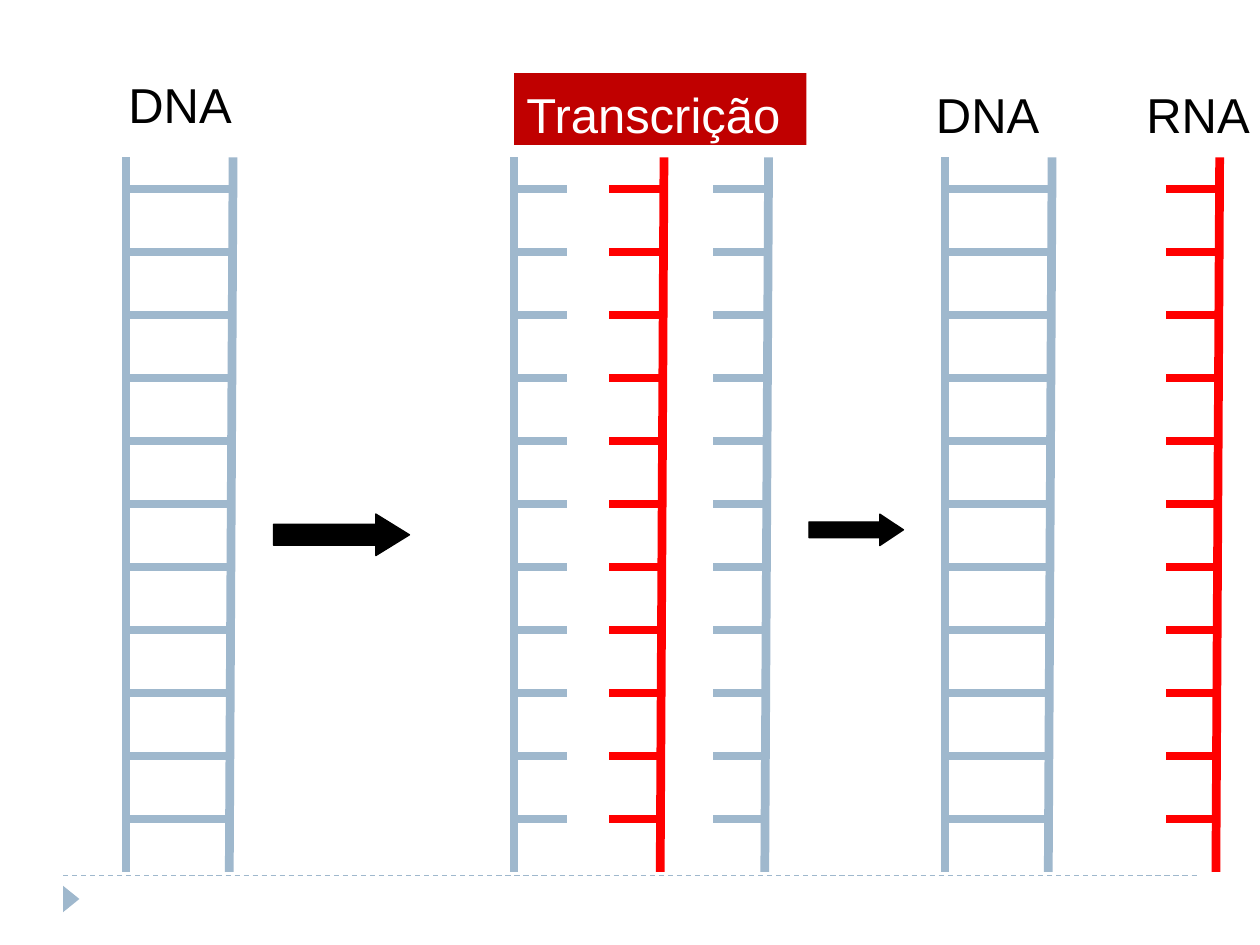
from lxml import etree
from pptx import Presentation
from pptx.dml.color import RGBColor
from pptx.enum import dml, shapes, text
from pptx.oxml.ns import qn
from pptx.util import Inches, Pt

HUES = {"blue": "9FB8CD", "red": "FF0000", "black": "000000",
        "white": "FFFFFF", "dark": "C00000"}

prs = Presentation()
prs.slide_width, prs.slide_height = Inches(10), Inches(7.5)
slide = prs.slides.add_slide(prs.slide_layouts[6])


def add_line(x1, y1, x2, y2, hue, width=5):
    line = slide.shapes.add_connector(
        shapes.MSO_CONNECTOR.STRAIGHT,
        Inches(x1), Inches(y1), Inches(x2), Inches(y2))
    line.line.color.rgb = RGBColor.from_string(HUES[hue])
    line.line.width = Pt(width)
    etree.SubElement(line._element.spPr, qn("a:effectLst"))
    return line


def add_block(kind, left, top, width, height, hue):
    block = slide.shapes.add_shape(
        kind, Inches(left), Inches(top), Inches(width), Inches(height))
    block.shadow.inherit = False
    block.fill.solid()
    block.fill.fore_color.rgb = RGBColor.from_string(HUES[hue])
    block.line.fill.background()
    return block


# Footer rule and marker
rule = add_line(0.5, 6.95, 9.5, 6.95, "blue", 0.75)
rule.line.dash_style = dml.MSO_LINE.DASH
mark = add_block(shapes.MSO_SHAPE.ISOSCELES_TRIANGLE,
                 0.46, 7.07, 0.21, 0.13, "blue")
mark.rotation = 90

# Strands: top x, bottom x, rung start, rung end, colour
strands = [
    (1, 1, 1, 1.42, "blue"),
    (4.08, 4.08, 4.08, 4.5, "blue"),
    (1.85, 1.82, 1.83, 1.42, "blue"),
    (6.1, 6.07, 6.08, 5.66, "blue"),
    (5.27, 5.24, 5.25, 4.83, "red"),
    (7.5, 7.5, 7.5, 7.91, "blue"),
    (8.35, 8.32, 8.33, 7.91, "blue"),
    (9.68, 9.65, 9.66, 9.25, "red"),
]
for top, foot, start, end, hue in strands:
    add_line(foot, 6.92, top, 1.25, hue)
    for step in range(11):
        y = 1.5 + 0.5 * step
        add_line(start, y, end, y, hue)

# Arrows between the stages
for left, width, height, head in [(2.17, 1.08, 0.33, 0.81),
                                  (6.42, 0.75, 0.25, 0.75)]:
    arrow = add_block(shapes.MSO_SHAPE.RIGHT_ARROW,
                      left, 4.08, width, height, "black")
    arrow.adjustments[1] = head
    arrow.line.color.rgb = RGBColor.from_string(HUES["black"])
    arrow.line.width = Pt(0.75)

# Labels: wording, left, top, width, text colour, fill
labels = [
    ("DNA", 0.92, 0.5, 1.22, "black", None),
    ("Transcrição", 4.08, 0.58, 2.32, "white", "dark"),
    ("DNA", 7.33, 0.58, 1.22, "black", None),
    ("RNA", 9, 0.58, 1.13, "black", None),
]
for words, left, top, width, hue, fill in labels:
    if fill:
        label = add_block(shapes.MSO_SHAPE.RECTANGLE,
                          left, top, width, 0.57, fill)
    else:
        label = slide.shapes.add_textbox(
            Inches(left), Inches(top), Inches(width), Inches(0.57))
    frame = label.text_frame
    frame.text = words
    frame.word_wrap = True
    frame.vertical_anchor = text.MSO_ANCHOR.TOP
    frame.margin_top, frame.margin_bottom = Inches(0.09), Inches(0.03)
    para = frame.paragraphs[0]
    para.alignment = text.PP_ALIGN.LEFT
    font = para.runs[0].font
    font.name, font.size = "Arial", Pt(28)
    font.color.rgb = RGBColor.from_string(HUES[hue])

prs.save("out.pptx")
